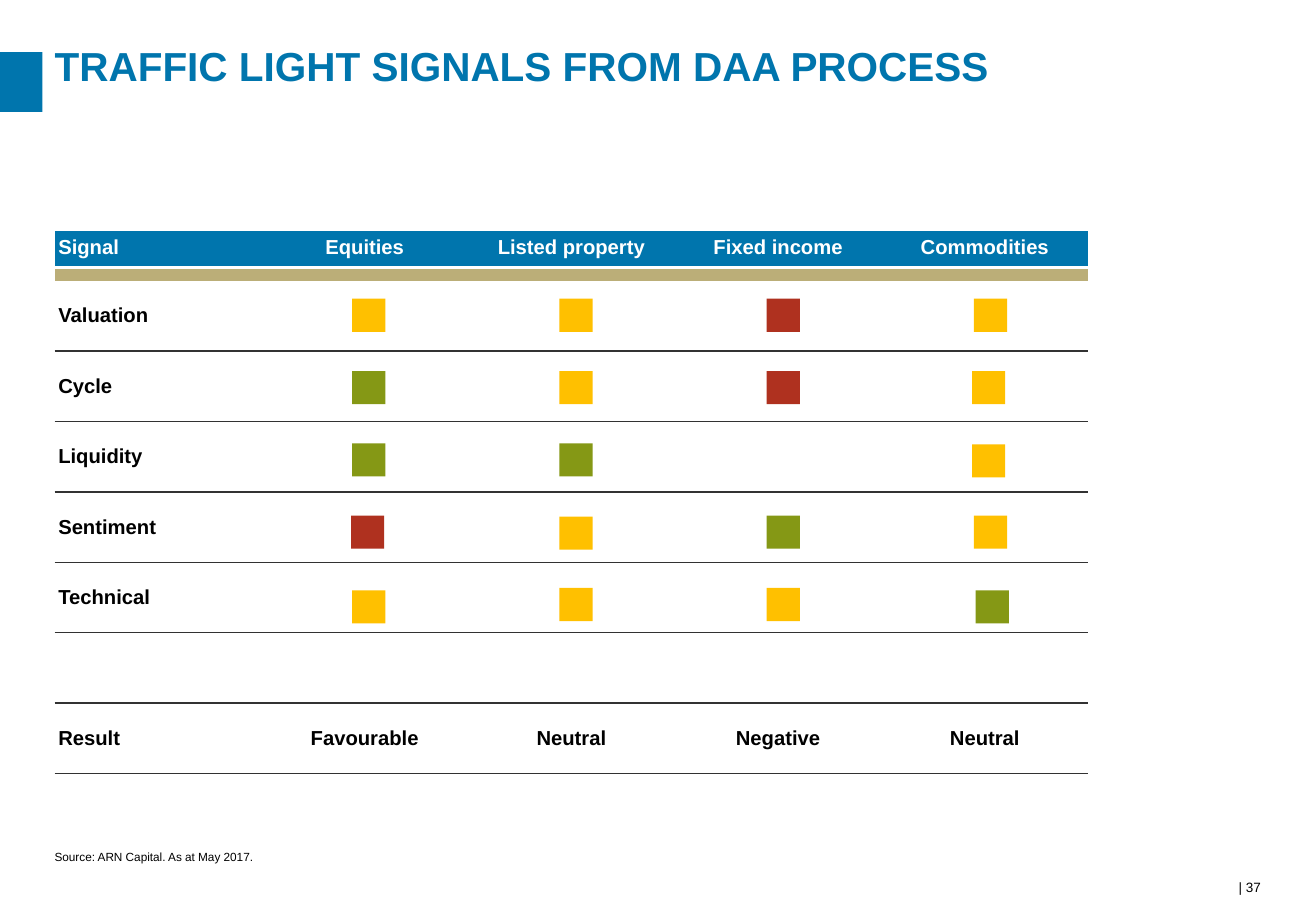
from dataclasses import dataclass

from lxml import etree
from pptx import Presentation
from pptx.dml.color import RGBColor
from pptx.enum.shapes import MSO_SHAPE
from pptx.enum.text import MSO_ANCHOR, PP_ALIGN
from pptx.oxml.ns import qn
from pptx.util import Inches, Pt

RECTANGLE = MSO_SHAPE.RECTANGLE
TOP, MIDDLE, BOTTOM = MSO_ANCHOR.TOP, MSO_ANCHOR.MIDDLE, MSO_ANCHOR.BOTTOM
LEFT, CENTER, RIGHT = PP_ALIGN.LEFT, PP_ALIGN.CENTER, PP_ALIGN.RIGHT


@dataclass(frozen=True)
class Theme:
    font: str = "Arial"
    blue: str = "0075AD"
    sand: str = "BBAE78"
    white: str = "FFFFFF"
    black: str = "000000"
    rule: str = "323232"
    amber: str = "FFC000"
    green: str = "859815"
    red: str = "AF311F"
    title_size: float = 24
    table_size: float = 12
    source_size: float = 7
    page_size: float = 8
    tiny_size: float = 1
    rule_width: float = 1
    header_rule_width: float = 2.25


THEME = Theme()

# The page is a grid of 130 columns by 90 rows, twelve to the inch
PAGE_COLUMNS, PAGE_ROWS = 130, 90
MARGIN = 5.4
TABLE_TOP = 22.8
TABLE_COLUMN = 20.42
HEADER_ROW, BAND_ROW, BODY_ROW = 3.42, 1.32, 6.96
LIGHT_LEFT, LIGHT_TOP, LIGHT_SIZE = 34.8, 29.52, 3.28
LIGHT_STEP_X, LIGHT_STEP_Y = 20.47, 7.14

ASSETS = ["Equities", "Listed property", "Fixed income", "Commodities"]
RESULTS = ["Favourable", "Neutral", "Negative", "Neutral"]

# One letter per asset: amber, green, red, or no light
SIGNALS = {
    "Valuation": "AARA",
    "Cycle": "GARA",
    "Liquidity": "GG-A",
    "Sentiment": "RAGA",
    "Technical": "AAAG",
}
LIGHT_COLOURS = {"A": THEME.amber, "G": THEME.green, "R": THEME.red}

# Lights that sit slightly off the grid, by signal row and asset column
NUDGES = {
    (1, 3): (-0.18, 0), (2, 3): (-0.18, 0.1),
    (3, 0): (-0.12, 0), (3, 1): (0, 0.1),
    (4, 0): (0, 0.24), (4, 3): (0.18, 0.24),
}


def grid(units):
    return Inches(units / 12)


def write(frame, text, size, colour=THEME.black, bold=False, align=LEFT, leading=None):
    para = frame.paragraphs[0]
    para.alignment = align
    if leading:
        para.line_spacing = Pt(leading)
    span = para.add_run()
    span.text = text
    span.font.name = THEME.font
    span.font.size = Pt(size)
    span.font.bold = bold
    span.font.color.rgb = RGBColor.from_string(colour)


def add_label(page, place, text, anchor=TOP, right_inset=0, **text_format):
    box = page.shapes.add_textbox(*map(grid, place))
    frame = box.text_frame
    frame.word_wrap = True
    frame.vertical_anchor = anchor
    frame.margin_left = frame.margin_top = frame.margin_bottom = 0
    frame.margin_right = Inches(right_inset)
    write(frame, text, **text_format)


def add_block(page, place, colour):
    block = page.shapes.add_shape(RECTANGLE, *map(grid, place))
    block.shadow.inherit = False
    block.fill.solid()
    block.fill.fore_color.rgb = RGBColor.from_string(colour)
    block.line.fill.background()


def set_borders(cell, top=None, bottom=None):
    """Draw the given (colour, width) edges and clear the others."""
    edges = {"a:lnL": None, "a:lnR": None, "a:lnT": top, "a:lnB": bottom}
    properties = cell._tc.get_or_add_tcPr()
    for position, (tag, edge) in enumerate(edges.items()):
        line = etree.Element(qn(tag))
        if edge:
            colour, width = edge
            line.set("w", str(Pt(width)))
            fill = etree.SubElement(line, qn("a:solidFill"))
            etree.SubElement(fill, qn("a:srgbClr")).set("val", colour)
        else:
            etree.SubElement(line, qn("a:noFill"))
        properties.insert(position, line)


def fill_cell(cell, text, padding, fill=None, top=None, bottom=None, **text_format):
    cell.vertical_anchor = MIDDLE
    cell.margin_left = cell.margin_right = Inches(0.03)
    cell.margin_top, cell.margin_bottom = map(Inches, padding)
    if fill:
        cell.fill.solid()
        cell.fill.fore_color.rgb = RGBColor.from_string(fill)
    else:
        cell.fill.background()
    set_borders(cell, top, bottom)
    if text:
        write(cell.text_frame, text, THEME.table_size, bold=True, **text_format)
    else:
        ending = etree.SubElement(cell.text_frame.paragraphs[0]._p, qn("a:endParaRPr"))
        ending.set("sz", str(THEME.tiny_size * 100))


def add_signal_table(page):
    blank = [""] * len(ASSETS)
    rows = [["Signal", *ASSETS], ["", *blank]]
    rows += [[signal, *blank] for signal in SIGNALS]
    rows += [["", *blank], ["Result", *RESULTS]]
    heights = [HEADER_ROW, BAND_ROW] + [BODY_ROW] * (len(rows) - 2)

    column_count = len(rows[0])
    table = page.shapes.add_table(
        len(rows), column_count, grid(MARGIN), grid(TABLE_TOP),
        grid(TABLE_COLUMN * column_count), grid(sum(heights))).table
    table.first_row = table.horz_banding = False
    for column in table.columns:
        column.width = grid(TABLE_COLUMN)

    header_rule = (THEME.white, THEME.header_rule_width)
    body_rule = (THEME.rule, THEME.rule_width)
    header = dict(padding=(0.04, 0.06), fill=THEME.blue,
                  colour=THEME.white, bottom=header_rule)
    band = dict(padding=(0, 0), fill=THEME.sand, top=header_rule)
    first = dict(padding=(0.19, 0.19), bottom=body_rule)
    body = dict(first, top=body_rule)
    styles = [header, band, first] + [body] * (len(rows) - 3)

    for r, (texts, height, style) in enumerate(zip(rows, heights, styles)):
        table.rows[r].height = grid(height)
        for c, text in enumerate(texts):
            fill_cell(table.cell(r, c), text, align=CENTER if c else LEFT, **style)


def add_traffic_lights(page):
    for r, lights in enumerate(SIGNALS.values()):
        for c, light in enumerate(lights):
            if light in LIGHT_COLOURS:
                shift_x, shift_y = NUDGES.get((r, c), (0, 0))
                place = (LIGHT_LEFT + c * LIGHT_STEP_X + shift_x,
                         LIGHT_TOP + r * LIGHT_STEP_Y + shift_y,
                         LIGHT_SIZE, LIGHT_SIZE)
                add_block(page, place, LIGHT_COLOURS[light])


def main():
    deck = Presentation()
    deck.slide_width, deck.slide_height = grid(PAGE_COLUMNS), grid(PAGE_ROWS)
    page = deck.slides.add_slide(deck.slide_layouts[6])

    # Title with its side bar
    add_block(page, (0, 5.16, 4.2, 5.9), THEME.blue)
    add_label(page, (MARGIN, 5.52, 119, 4.8), "TRAFFIC LIGHT SIGNALS FROM DAA PROCESS",
              size=THEME.title_size, colour=THEME.blue, bold=True, leading=20)

    # Table and the lights on top of it
    add_signal_table(page)
    add_traffic_lights(page)

    # Source and page number
    add_label(page, (MARGIN, 81.84, 119, 3.48), "Source: ARN Capital. As at May 2017.",
              anchor=BOTTOM, size=THEME.source_size)
    add_label(page, (120.72, 86.88, 6, 1.56), "| 37", anchor=BOTTOM,
              right_inset=0.18, size=THEME.page_size, align=RIGHT)

    deck.save("out.pptx")


if __name__ == "__main__":
    main()
